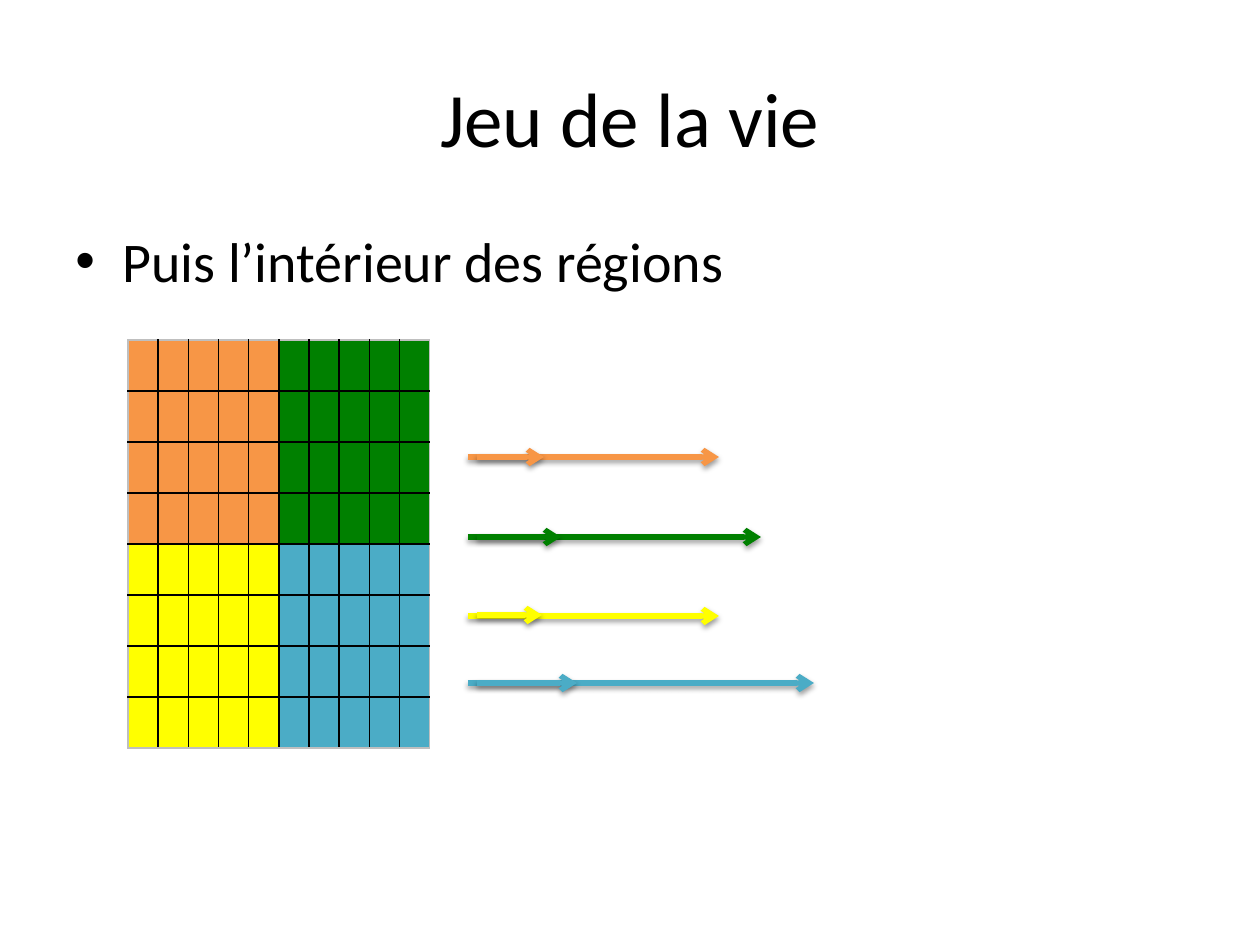
import pptx
import pptx.util
import pptx.dml.color
import pptx.enum.shapes
import pptx.enum.text
import pptx.oxml
import pptx.oxml.ns

PX = 914400 // 126
ORANGE, GREEN, YELLOW, BLUE = "F79646", "008000", "FFFF00", "4BACC6"
BLACK, GREY = "000000", "BFBFBF"


def px(n):
    return pptx.util.Emu(n * PX)


def rgb(value):
    return pptx.dml.color.RGBColor.from_string(value)


def xml(body):
    return pptx.oxml.parse_xml(f'<a:root {pptx.oxml.ns.nsdecls("a")}>{body}</a:root>')[0]


def write(tf, text, size, align, anchor, font="Calibri", color=BLACK):
    tf.word_wrap = True
    tf.vertical_anchor = anchor
    p = tf.paragraphs[0]
    p.alignment = align
    r = p.add_run()
    r.text = text
    r.font.name = font
    r.font.size = pptx.util.Pt(size)
    r.font.color.rgb = rgb(color)
    return p


class Deck:
    """Holds the style and the current slide."""

    def __init__(self, slide, line_width=3, border_width=1):
        self.s = slide
        self.line_width = line_width
        self.border_width = border_width

    def title(self, text, x, y, w, h):
        sp = self.s.shapes.title
        sp.left, sp.top, sp.width, sp.height = map(px, (x, y, w, h))
        write(sp.text_frame, text, size=44, align=pptx.enum.text.PP_ALIGN.CENTER,
              anchor=pptx.enum.text.MSO_ANCHOR.MIDDLE)

    def bullet(self, text, x, y, w, h, indent=47):
        sp = self.s.shapes.add_textbox(*map(px, (x, y, w, h)))
        p = write(sp.text_frame, text, size=32, align=pptx.enum.text.PP_ALIGN.LEFT,
                  anchor=pptx.enum.text.MSO_ANCHOR.TOP)
        pPr = p._p.get_or_add_pPr()
        pPr.set("marL", str(px(indent)))
        pPr.set("indent", str(-px(indent)))
        pPr.append(xml('<a:spcBef><a:spcPct val="20000"/></a:spcBef>'))
        pPr.append(xml('<a:buFont typeface="Arial"/>'))
        pPr.append(xml('<a:buChar char="•"/>'))

    def border(self, side, color):
        width = pptx.util.Pt(self.border_width)
        return xml(f'<a:{side} w="{width}"><a:solidFill><a:srgbClr val="{color}"/>'
                   f'</a:solidFill></a:{side}>')

    def grid(self, x, y, w, h, rows, cols, quarters):
        table = self.s.shapes.add_table(rows, cols, *map(px, (x, y, w, h))).table
        table.first_row = table.horz_banding = False
        for i in range(rows):
            for j in range(cols):
                cell = table.cell(i, j)
                cell.fill.solid()
                cell.fill.fore_color.rgb = rgb(quarters[2 * i // rows][2 * j // cols])
                outer = {"lnL": j == 0, "lnR": j == cols - 1,
                         "lnT": i == 0, "lnB": i == rows - 1}
                tcPr = cell._tc.get_or_add_tcPr()
                for n, (side, edge) in enumerate(outer.items()):
                    tcPr.insert(n, self.border(side, GREY if edge else BLACK))

    def arrow(self, x1, x2, y, color):
        sp = self.s.shapes.add_connector(pptx.enum.shapes.MSO_CONNECTOR.STRAIGHT,
                                         px(x1), px(y), px(x2), px(y))
        sp.line.color.rgb = rgb(color)
        sp.line.width = pptx.util.Pt(self.line_width)
        sp.line._get_or_add_ln().append(xml('<a:tailEnd type="arrow"/>'))
        blur, dist = pptx.util.Pt(3.1), pptx.util.Pt(1.6)
        sp._element.spPr.append(xml(
            f'<a:effectLst><a:outerShdw blurRad="{blur}" dist="{dist}" dir="5400000" '
            f'rotWithShape="0"><a:srgbClr val="{BLACK}"><a:alpha val="38000"/></a:srgbClr>'
            '</a:outerShdw></a:effectLst>'))


def main():
    prs = pptx.Presentation()
    prs.slide_width, prs.slide_height = px(1260), px(945)
    deck = Deck(prs.slides.add_slide(prs.slide_layouts[5]))
    deck.title("Jeu de la vie", 63, 38, 1134, 158)
    deck.bullet("Puis l’intérieur des régions", 63, 220, 1134, 624)
    deck.grid(128, 340, 302, 408, rows=8, cols=10,
              quarters=[[ORANGE, GREEN], [YELLOW, BLUE]])
    long_arrows = [(814, 683, BLUE), (719, 616, YELLOW), (761, 537, GREEN), (719, 457, ORANGE)]
    short_arrows = [(577, 683, BLUE), (542, 615, YELLOW), (561, 537, GREEN), (544, 457, ORANGE)]
    for start, arrows in ((468, long_arrows), (477, short_arrows)):
        for end, y, color in arrows:
            deck.arrow(start, end, y, color)
    prs.save("out.pptx")


if __name__ == "__main__":
    main()
